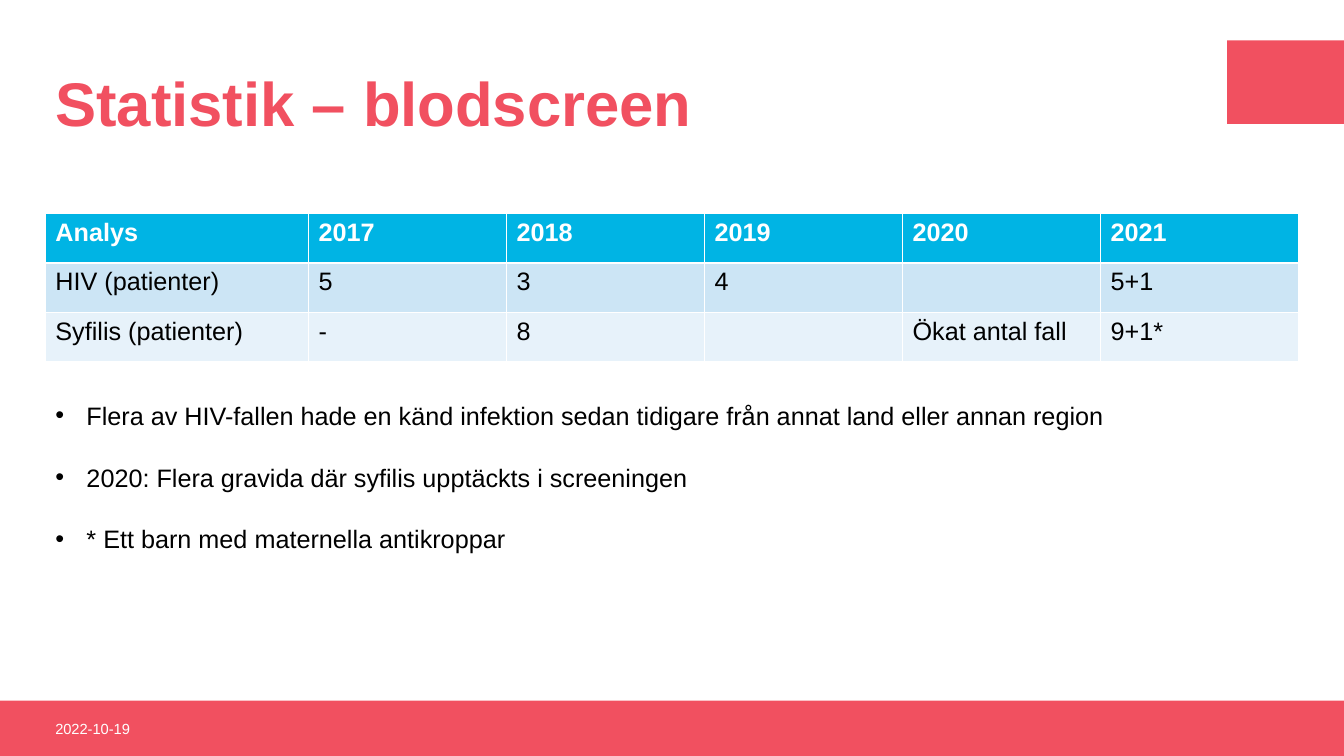
from lxml.etree import SubElement
from pptx import Presentation
from pptx.dml.color import RGBColor
from pptx.enum.shapes import MSO_SHAPE
from pptx.enum.text import MSO_ANCHOR
from pptx.oxml.ns import qn
from pptx.util import Inches, Pt

TITLE = "Statistik – blodscreen"
DATE = "2022-10-19"
RESULTS = [
    ("Analys", "2017", "2018", "2019", "2020", "2021"),
    ("HIV (patienter)", "5", "3", "4", "", "5+1"),
    ("Syfilis (patienter)", "-", "8", "", "Ökat antal fall", "9+1*"),
]
REMARKS = [
    "Flera av HIV-fallen hade en känd infektion sedan tidigare från annat land eller annan region",
    "2020: Flera gravida där syfilis upptäckts i screeningen",
    "* Ett barn med maternella antikroppar",
]
COLORS = {"accent": "F15060", "white": "FFFFFF", "black": "000000"}
ROW_FILLS = ("00B4E4", "CCE5F5", "E7F2FA")
FONT = "Arial"

WIDTH, HEIGHT = 13.33, 7.5
MARGIN = 0.45
CONTENT_WIDTH = WIDTH - 2 * MARGIN
FOOTER_HEIGHT = 0.55
FOOTER_TOP = HEIGHT - FOOTER_HEIGHT
TAB_WIDTH = 1.16
HEADER_TOP = 0.4
ANALYSIS_WIDTH = 2.61
YEAR_WIDTH = (CONTENT_WIDTH - ANALYSIS_WIDTH) / (len(RESULTS[0]) - 1)
ROW_HEIGHT = 0.49
TABLE_TOP = 2.12
INDENT = 0.31


def style(paragraph, size, color, bold=False):
    for run in paragraph.runs:
        run.font.name = FONT
        run.font.size = Pt(size)
        run.font.bold = bold
        run.font.color.rgb = RGBColor.from_string(COLORS[color])


def add_block(slide, left, top, width, height):
    block = slide.shapes.add_shape(
        MSO_SHAPE.RECTANGLE, Inches(left), Inches(top), Inches(width), Inches(height))
    block.shadow.inherit = False
    block.fill.solid()
    block.fill.fore_color.rgb = RGBColor.from_string(COLORS["accent"])
    block.line.fill.background()


def add_text(slide, left, top, width, height, lines, size, color,
             bold=False, anchor=MSO_ANCHOR.MIDDLE):
    frame = slide.shapes.add_textbox(
        Inches(left), Inches(top), Inches(width), Inches(height)).text_frame
    frame.word_wrap = True
    frame.vertical_anchor = anchor
    frame.text = "\n".join(lines)
    for paragraph in frame.paragraphs:
        style(paragraph, size, color, bold)
    return frame


def add_results(slide):
    results = slide.shapes.add_table(
        len(RESULTS), len(RESULTS[0]), Inches(MARGIN), Inches(TABLE_TOP),
        Inches(CONTENT_WIDTH), Inches(ROW_HEIGHT * len(RESULTS))).table
    for index, column in enumerate(results.columns):
        column.width = Inches(YEAR_WIDTH if index else ANALYSIS_WIDTH)
    for r, values in enumerate(RESULTS):
        results.rows[r].height = Inches(ROW_HEIGHT)
        for c, value in enumerate(values):
            cell = results.cell(r, c)
            cell.fill.solid()
            cell.fill.fore_color.rgb = RGBColor.from_string(ROW_FILLS[r])
            paragraph = cell.text_frame.paragraphs[0]
            if value:
                paragraph.text = value
            style(paragraph, 18, "black" if r else "white", bold=r == 0)


def add_remarks(slide):
    remarks = add_text(slide, MARGIN, 3.92, CONTENT_WIDTH, 1.62, REMARKS,
                       18, "black", anchor=MSO_ANCHOR.TOP)
    for index, paragraph in enumerate(remarks.paragraphs):
        if index:
            paragraph.space_before = Pt(22.5)
        properties = paragraph._p.get_or_add_pPr()
        properties.set("marL", str(Inches(INDENT)))
        properties.set("indent", str(-Inches(INDENT)))
        SubElement(properties, qn("a:buFont"), typeface=FONT)
        SubElement(properties, qn("a:buChar"), char="•")


def main():
    presentation = Presentation()
    presentation.slide_width = Inches(WIDTH)
    presentation.slide_height = Inches(HEIGHT)
    slide = presentation.slides.add_slide(presentation.slide_layouts[6])
    add_block(slide, 0, FOOTER_TOP, WIDTH, FOOTER_HEIGHT)
    add_block(slide, WIDTH - TAB_WIDTH, HEADER_TOP, TAB_WIDTH, 0.83)
    title = add_text(slide, MARGIN, HEADER_TOP, 11.61, 1.32, [TITLE], 44, "accent", bold=True)
    title.paragraphs[0].line_spacing = 0.9
    add_text(slide, MARGIN, FOOTER_TOP, 3, FOOTER_HEIGHT, [DATE], 10.5, "white")
    add_results(slide)
    add_remarks(slide)
    presentation.save("out.pptx")


if __name__ == "__main__":
    main()
